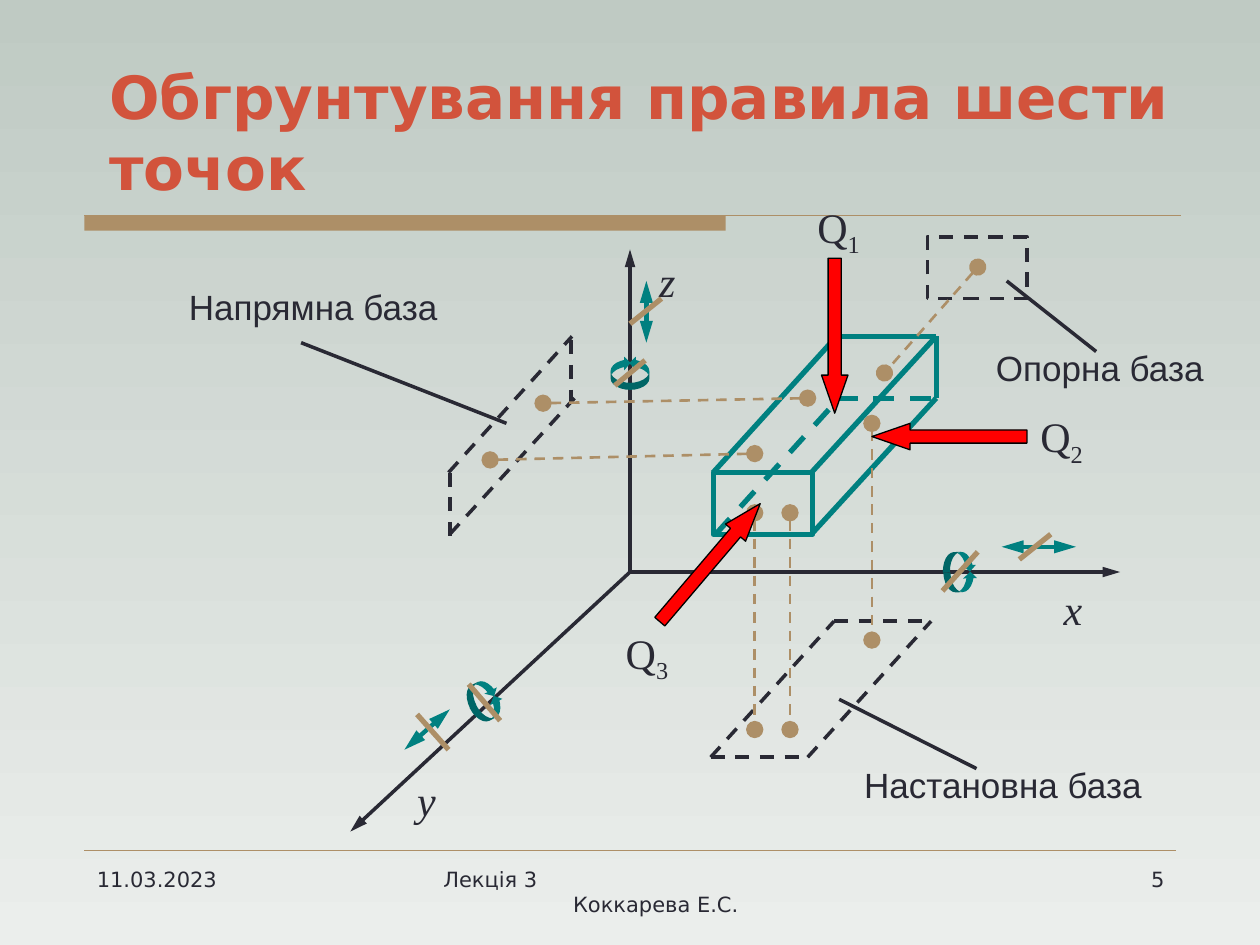
from lxml import etree
from pptx import Presentation
from pptx.dml.color import RGBColor
from pptx.enum.dml import MSO_LINE
from pptx.enum.shapes import MSO_CONNECTOR, MSO_SHAPE
from pptx.enum.text import MSO_ANCHOR, PP_ALIGN
from pptx.oxml.ns import qn
from pptx.util import Inches, Pt

DASH = MSO_LINE.DASH
STRAIGHT = MSO_CONNECTOR.STRAIGHT
RECT = MSO_SHAPE.RECTANGLE
DOWN_ARROW = MSO_SHAPE.DOWN_ARROW
CURVED_ARROW = MSO_SHAPE.CURVED_UP_ARROW
LEFT, CENTER, RIGHT = PP_ALIGN.LEFT, PP_ALIGN.CENTER, PP_ALIGN.RIGHT
TOP, BOTTOM = MSO_ANCHOR.TOP, MSO_ANCHOR.BOTTOM

INK, TEAL, TAN, RED, BLACK = "292934", "008080", "AD8F67", "FF0000", "000000"
TITLE_COLOR = "D2533C"
SANS, SERIF, LABEL = "DejaVu Sans", "Times New Roman", "Arial"


def rgb(color):
    return RGBColor.from_string(color)


def paint_background(s):
    fill = s.background.fill
    fill.gradient()
    fill.gradient_angle = 270
    for stop, color, position in zip(fill.gradient_stops, ("BFCAC3", "EBEEEC"), (0, 1)):
        stop.color.rgb = rgb(color)
        stop.position = position


def add_line(s, start, end, color=INK, width=2, dash=False, head=None, tail=None, breadth="med"):
    c = s.shapes.add_connector(STRAIGHT, *[Inches(v) for v in (*start, *end)])
    c.line.color.rgb = rgb(color)
    c.line.width = Pt(width)
    if dash:
        c.line.dash_style = DASH
    ln = c.line._get_or_add_ln()
    for tag, kind in (("a:headEnd", head), ("a:tailEnd", tail)):
        if kind:
            etree.SubElement(ln, qn(tag), type=kind, w=breadth, len="lg")
    etree.SubElement(c._element.spPr, qn("a:effectLst"))
    return c


def add_shape(s, kind, box, fill=None, line=None, width=0.75, dash=False, rotation=0, adj=()):
    sp = s.shapes.add_shape(kind, *[Inches(v) for v in box])
    sp.shadow.inherit = False
    sp.rotation = rotation
    for i, value in enumerate(adj):
        sp.adjustments[i] = value
    if fill:
        sp.fill.solid()
        sp.fill.fore_color.rgb = rgb(fill)
    else:
        sp.fill.background()
    if line:
        sp.line.color.rgb = rgb(line)
        sp.line.width = Pt(width)
        if dash:
            sp.line.dash_style = DASH
    else:
        sp.line.fill.background()
    return sp


def add_text(s, box, lines, size, font, color=INK, align=LEFT, anchor=TOP,
             wrap=True, bold=False, italic=False):
    tf = s.shapes.add_textbox(*[Inches(v) for v in box]).text_frame
    tf.word_wrap = wrap
    tf.vertical_anchor = anchor
    tf.text = lines
    for p in tf.paragraphs:
        p.alignment = align
        for r in p.runs:
            style_run(r, size, font, color, bold, italic)
    return tf


def style_run(r, size, font, color, bold=False, italic=False):
    r.font.size = Pt(size)
    r.font.name = font
    r.font.color.rgb = rgb(color)
    r.font.bold = bold
    r.font.italic = italic


def add_force_label(s, left, top, index):
    tf = add_text(s, (left, top, 0.55, 0.5), "Q", 24, SERIF, align=CENTER, wrap=False)
    r = tf.paragraphs[0].add_run()
    r.text = index
    style_run(r, 24, SERIF, INK)
    r.font._element.set("baseline", "-25000")


def add_force_arrow(s, left, top, rotation=0):
    add_shape(s, DOWN_ARROW, (left, top, 0.21, 1.23), RED, BLACK,
              rotation=rotation, adj=(0.5, 1.44))


def add_rotation_mark(s, lower, upper, rotation):
    for (left, top), flipped in ((lower, False), (upper, True)):
        sp = add_shape(s, CURVED_ARROW, (left, top, 0.27, 0.16), TEAL,
                       rotation=rotation, adj=(0.35, 0.69, 0.33))
        if flipped:
            sp._element.spPr.find(qn("a:xfrm")).set("flipV", "1")


def add_frame(s):
    add_line(s, (0.67, 1.71), (9.37, 1.71), TAN, 0.75)
    add_shape(s, RECT, (0.67, 1.71, 5.09, 0.12), TAN)
    add_line(s, (0.67, 6.75), (9.33, 6.75), TAN, 0.25)
    add_text(s, (0.67, 6.83, 2.17, 0.52), "11.03.2023", 12, SANS)
    tf = add_text(s, (3.42, 6.83, 3.17, 0.52), "Лекція 3\nКоккарева Е.С.", 12, SANS)
    author = tf.paragraphs[1]
    author.alignment = CENTER
    author._p.get_or_add_pPr().set("marL", str(Inches(0.4)))
    add_text(s, (7.17, 6.83, 2.17, 0.52), "5", 12, SANS, align=RIGHT)
    add_text(s, (0.77, 0.33, 8.75, 1.33), "Обгрунтування правила шести точок",
             34, SANS, TITLE_COLOR, anchor=BOTTOM, bold=True)


def add_axes(s):
    for end in ((5, 1.98), (8.89, 4.54), (2.78, 6.6)):
        add_line(s, (5, 4.54), end, tail="triangle")
    for name, left, top in (("x", 8.34, 4.58), ("y", 3.21, 6.1), ("z", 5.12, 1.98)):
        add_text(s, (left, top, 0.35, 0.5), name, 24, SERIF,
                 align=CENTER, wrap=False, italic=True)


def add_workpiece(s):
    add_shape(s, RECT, (5.66, 3.75, 0.79, 0.49), line=TEAL, width=3)
    for start, end, hidden in (
        ((5.66, 3.75), (6.64, 2.67), False),
        ((5.68, 4.24), (6.66, 3.16), True),
        ((6.44, 3.75), (7.43, 2.67), False),
        ((6.44, 4.24), (7.43, 3.16), False),
        ((7.43, 2.67), (7.43, 3.16), False),
        ((6.64, 2.67), (6.64, 3.16), True),
        ((6.64, 2.67), (7.43, 2.67), False),
        ((6.64, 3.16), (7.43, 3.16), True),
    ):
        add_line(s, start, end, TEAL, 3, hidden)


def add_bases(s):
    add_shape(s, RECT, (7.36, 1.88, 0.79, 0.49), line=INK, width=2, dash=True)
    for start, end in (
        ((5.64, 6.01), (6.62, 4.93)), ((6.41, 6.01), (7.39, 4.93)),
        ((5.64, 6.01), (6.41, 6.01)), ((6.62, 4.93), (7.39, 4.93)),
        ((3.56, 3.75), (4.54, 2.67)), ((3.57, 4.24), (4.56, 3.16)),
        ((3.57, 3.75), (3.57, 4.26)), ((4.53, 2.7), (4.53, 3.21)),
    ):
        add_line(s, start, end, dash=True)
    for start, end in (
        ((5.99, 4.07), (5.99, 5.79)), ((6.27, 4.07), (6.27, 5.79)),
        ((6.92, 3.36), (6.92, 5.08)), ((7.76, 2.12), (7.02, 2.96)),
        ((4.31, 3.2), (6.41, 3.16)), ((3.89, 3.65), (5.99, 3.6)),
    ):
        add_line(s, start, end, TAN, 1.5, True, "oval", "oval", "lg")


def add_motions(s):
    for start, end in (((3.21, 5.95), (3.57, 5.63)), ((7.95, 4.34), (8.54, 4.34)),
                       ((5.13, 2.72), (5.13, 2.23))):
        add_line(s, start, end, TEAL, 2.5, head="triangle", tail="triangle")
    add_rotation_mark(s, (3.75, 5.55), (3.68, 5.41), 333)
    add_rotation_mark(s, (4.94, 2.88), (4.79, 2.88), 270)
    add_rotation_mark(s, (7.49, 4.54), (7.48, 4.38), 357.7)


def add_forces(s):
    add_force_arrow(s, 7.43, 2.85, 90)
    add_force_arrow(s, 5.53, 3.85, 220.4)
    add_force_arrow(s, 6.52, 2.05)
    for index, left, top in (("1", 6.38, 1.55), ("2", 8.15, 3.21), ("3", 4.86, 4.93)):
        add_force_label(s, left, top, index)


def add_base_labels(s):
    for label, box, start, end in (
        ("Настановна база", (6.75, 6.01, 2.42, 0.44), (6.66, 5.55), (7.75, 6.1)),
        ("Напрямна база", (1.39, 2.22, 2.19, 0.44), (2.39, 2.72), (4.02, 3.36)),
        ("Опорна база", (7.8, 2.7, 1.86, 0.44), (7.99, 2.23), (8.7, 2.79)),
    ):
        add_text(s, box, label, 20, LABEL, align=CENTER, wrap=False)
        add_line(s, start, end)


def add_strikes(s):
    for start, end in (
        ((5, 2.57), (5.25, 2.37)), ((3.72, 5.43), (3.97, 5.72)),
        ((7.48, 4.69), (7.76, 4.38)), ((8.09, 4.44), (8.34, 4.24)),
        ((4.88, 3.06), (5.12, 2.86)), ((3.31, 5.67), (3.56, 5.95)),
    ):
        add_line(s, start, end, TAN, 3)


def main():
    prs = Presentation()
    prs.slide_width, prs.slide_height = Inches(10), Inches(7.5)
    s = prs.slides.add_slide(prs.slide_layouts[6])
    paint_background(s)
    for draw in (add_frame, add_axes, add_workpiece, add_bases, add_motions,
                 add_forces, add_base_labels, add_strikes):
        draw(s)
    prs.save("out.pptx")


if __name__ == "__main__":
    main()
